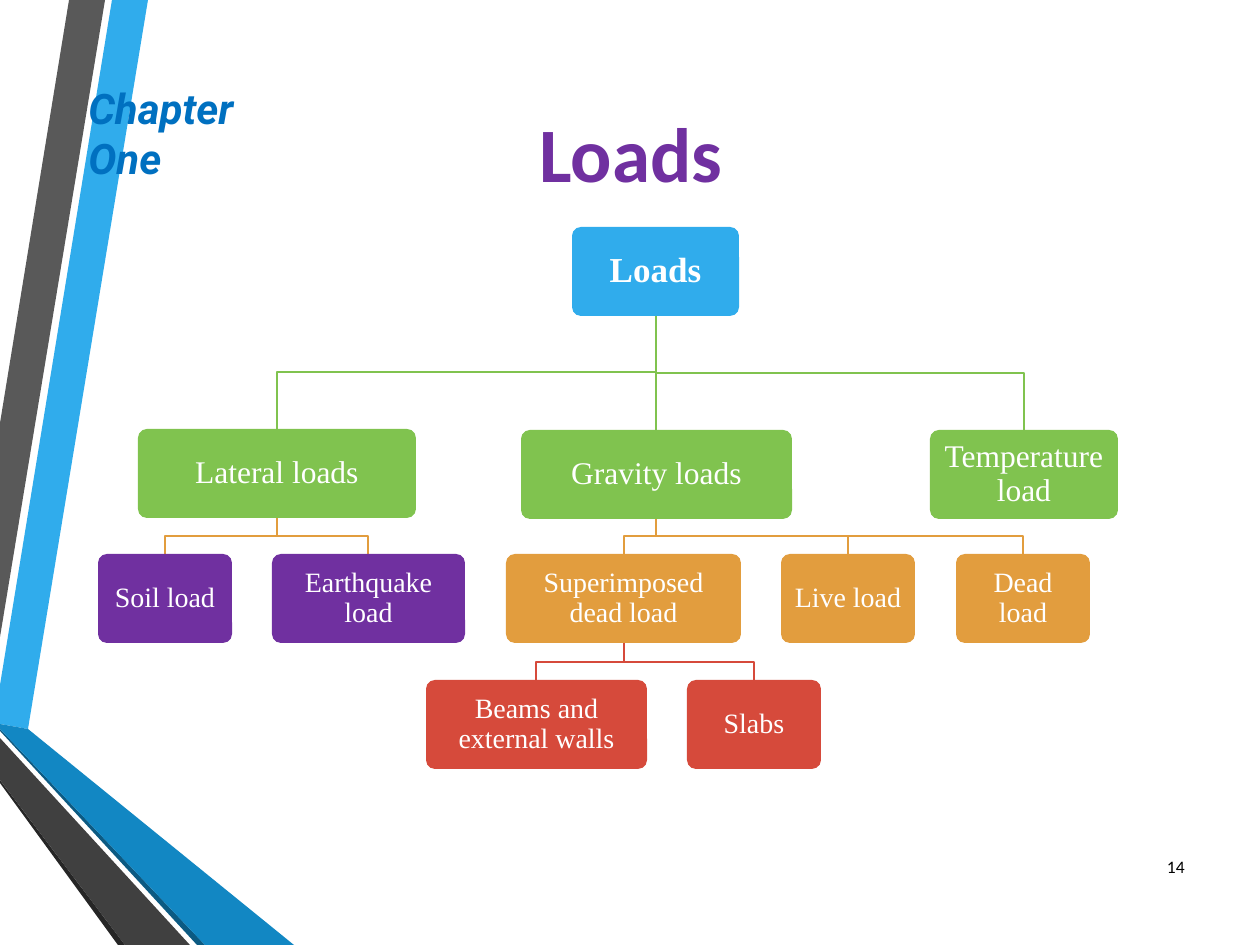
from pptx import Presentation
from pptx.dml.color import RGBColor
from pptx.enum.shapes import MSO_SHAPE
from pptx.enum.text import MSO_ANCHOR as ANCHOR, PP_ALIGN as ALIGN
from pptx.util import Pt

PX = 914400 / 126
COLORS = {
    "sky": "30ACEC", "gray": "595959", "black": "262626", "navy": "0C5A82",
    "blue": "1287C3", "charcoal": "404040", "purple": "7030A0",
    "green": "80C34F", "orange": "E29D3E", "red": "D64A3B",
    "chapter": "0070C0", "white": "FFFFFF", "ink": "000000",
}


def outline(points, closed):
    builder = s.shapes.build_freeform(*points[0], scale=PX)
    builder.add_line_segments(points[1:], close=closed)
    sp = builder.convert_to_shape()
    sp.shadow.inherit = False
    return sp


def write(sp, text, font, size, color, align, bold=False, italic=False):
    tf = sp.text_frame
    tf.word_wrap = True
    tf.text = text
    p = tf.paragraphs[0]
    p.alignment = align
    p.font.name, p.font.size = font, Pt(size)
    p.font.bold, p.font.italic = bold, italic
    p.font.color.rgb = RGBColor.from_string(COLORS[color])
    return tf


prs = Presentation()
prs.slide_width, prs.slide_height = int(1260 * PX), int(945 * PX)
s = prs.slides.add_slide(prs.slide_layouts[5])

ribbons = [
    ("sky", [(0, 685), (0, 724), (28, 729), (148, 0), (112, 0)]),
    ("gray", [(105, 0), (69, 0), (0, 423), (0, 637)]),
    ("black", [(0, 780), (0, 783), (118, 945), (125, 945)]),
    ("navy", [(0, 729), (0, 731), (197, 945), (205, 945)]),
    ("blue", [(0, 729), (205, 945), (294, 945), (28, 729), (0, 724)]),
    ("charcoal", [(0, 780), (125, 945), (190, 945), (0, 738)]),
]
for color, points in ribbons:
    sp = outline(points, True)
    sp.fill.solid()
    sp.fill.fore_color.rgb = RGBColor.from_string(COLORS[color])
    sp.line.fill.background()

title = s.shapes.title
title.left, title.top, title.width, title.height = [
    int(v * PX) for v in (162, 88, 938, 127)]
tf = write(title, "Loads", "Calibri", 44, "purple", ALIGN.CENTER, bold=True)
tf.vertical_anchor = ANCHOR.MIDDLE

BOX_H = 89
boxes = {
    "Loads": (572, 227, 167, "sky", 20, None, None),
    "Temperature load": (930, 430, 188, "green", 18, "Loads", "green"),
    "Gravity loads": (521, 430, 271, "green", 18, "Loads", "green"),
    "Lateral loads": (138, 429, 278, "green", 18, "Loads", "green"),
    "Dead load": (956, 554, 134, "orange", 16, "Gravity loads", "orange"),
    "Live load": (781, 554, 134, "orange", 16, "Gravity loads", "orange"),
    "Superimposed dead load": (506, 554, 235, "orange", 16, "Gravity loads", "orange"),
    "Slabs": (687, 680, 134, "red", 16, "Superimposed dead load", "red"),
    "Beams and external walls": (426, 680, 221, "red", 16, "Superimposed dead load", "red"),
    "Earthquake load": (272, 554, 193, "purple", 16, "Lateral loads", "orange"),
    "Soil load": (98, 554, 134, "purple", 16, "Lateral loads", "orange"),
}
for text, (x, y, w, fill, size, parent, branch) in boxes.items():
    if parent:
        px, py, pw = boxes[parent][:3]
        start_x, start_y, end_x = px + pw / 2, py + BOX_H, x + w / 2
        mid_y = (start_y + y) / 2
        sp = outline([(start_x, start_y), (start_x, mid_y),
                      (end_x, mid_y), (end_x, y)], False)
        sp.fill.background()
        sp.line.color.rgb = RGBColor.from_string(COLORS[branch])
        sp.line.width = Pt(1.25)

    sp = s.shapes.add_shape(MSO_SHAPE.ROUNDED_RECTANGLE,
                            *[int(v * PX) for v in (x, y, w, BOX_H)])
    sp.adjustments[0] = 0.1
    sp.shadow.inherit = False
    sp.fill.solid()
    sp.fill.fore_color.rgb = RGBColor.from_string(COLORS[fill])
    sp.line.fill.background()
    tf = write(sp, text, "Times New Roman", size, "white", ALIGN.CENTER,
               bold=parent is None)
    tf.vertical_anchor = ANCHOR.MIDDLE
    tf.paragraphs[0].line_spacing = 0.9
    tf.margin_left = tf.margin_right = int(11 * PX)
    tf.margin_top = tf.margin_bottom = int(11 * PX)

number = s.shapes.add_textbox(*[int(v * PX) for v in (1138, 842, 59, 50)])
tf = write(number, "14", "Calibri", 10, "ink", ALIGN.RIGHT)
tf.vertical_anchor = ANCHOR.MIDDLE

chapter = s.shapes.add_textbox(*[int(v * PX) for v in (76, 76, 190, 63)])
write(chapter, "Chapter One", "Roboto", 24, "chapter", ALIGN.LEFT,
      bold=True, italic=True)

prs.save("out.pptx")
